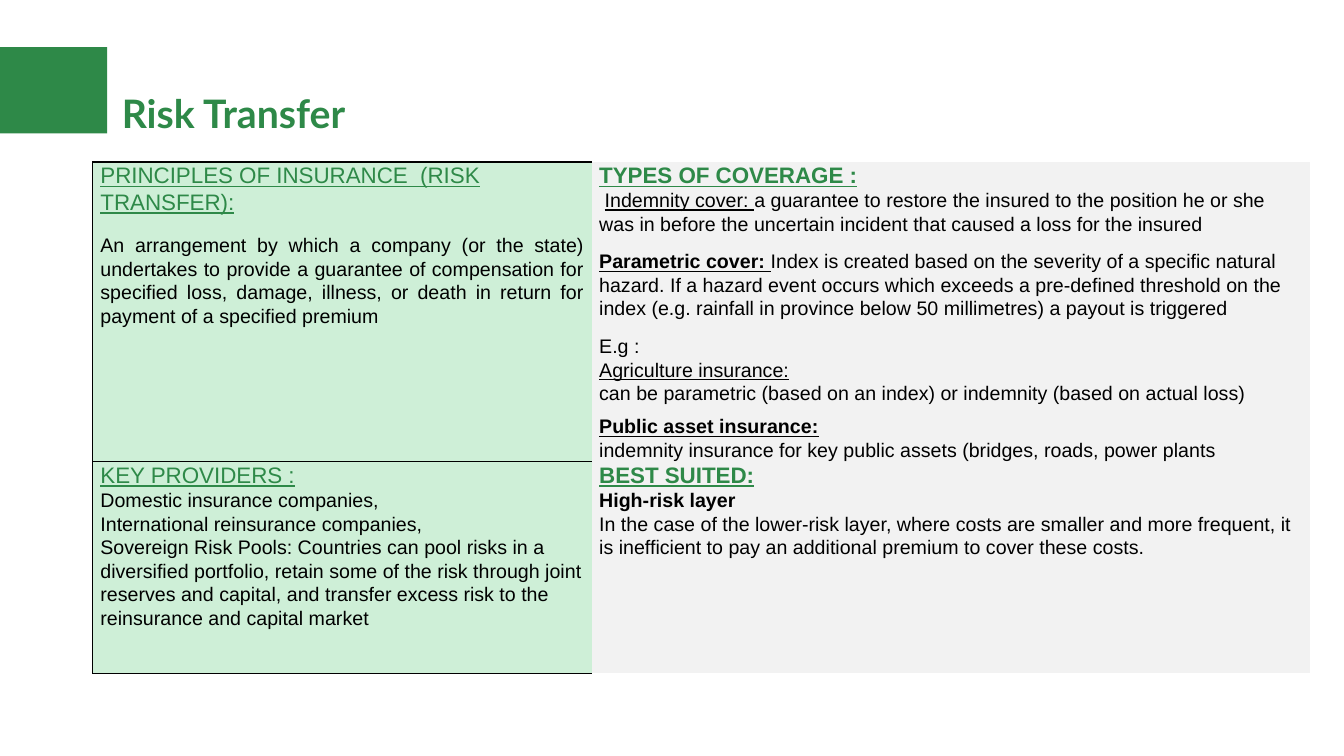
import pptx
import pptx.dml.color
import pptx.enum.shapes
import pptx.enum.text
import pptx.oxml.ns
import pptx.util
from lxml import etree

Cm, Pt = pptx.util.Cm, pptx.util.Pt
ALIGN = pptx.enum.text.PP_ALIGN

COLOURS = {"green": "2E8948", "mint": "CEEFD7", "grey": "F2F2F2", "black": "000000"}
HEADING = {"size": 16, "colour": "green", "underline": True}
BOLD_HEADING = {**HEADING, "bold": True}
LABEL = {"underline": True}
BOLD_LABEL = {"underline": True, "bold": True}
BODY = {}

TITLE = "Risk Transfer"
PRINCIPLES = [
    {"runs": [("PRINCIPLES OF INSURANCE  (RISK TRANSFER):", HEADING)]},
    {"runs": [("An arrangement by which a company (or the state) undertakes to provide a guarantee of "
               "compensation for specified loss, damage, illness, or death in return for payment of a "
               "specified premium", BODY)], "before": 13, "align": ALIGN.JUSTIFY},
]
COVERAGE = [
    {"runs": [("TYPES OF COVERAGE :", BOLD_HEADING)]},
    {"runs": [(" ", BODY), ("Indemnity cover: ", LABEL),
              ("a guarantee to restore the insured to the position he or she was in before the "
               "uncertain incident that caused a loss for the insured", BODY)]},
    {"runs": [("Parametric cover: ", BOLD_LABEL),
              ("Index is created based on the severity of a specific natural hazard. If a hazard event "
               "occurs which exceeds a pre-defined threshold on the index (e.g. rainfall in province "
               "below 50 millimetres) a payout is triggered", BODY)], "before": 10},
    {"runs": [("E.g :", BODY)], "before": 10},
    {"runs": [("Agriculture insurance:", LABEL)]},
    {"runs": [("can be parametric (based on an index) or indemnity (based on actual loss)", BODY)]},
    {"runs": [("Public asset insurance:", BOLD_LABEL)], "before": 7},
    {"runs": [("indemnity insurance for key public assets (bridges, roads, power plants", BODY)]},
]
PROVIDERS = [
    {"runs": [("KEY PROVIDERS :", HEADING)]},
    {"runs": [("Domestic insurance companies,", BODY)]},
    {"runs": [("International reinsurance companies,", BODY)]},
    {"runs": [("Sovereign Risk Pools: Countries can pool risks in a diversified portfolio, retain some of "
               "the risk through joint reserves and capital, and transfer excess risk to the "
               "reinsurance and capital market", BODY)]},
]
BEST_SUITED = [
    {"runs": [("BEST SUITED:", BOLD_HEADING)]},
    {"runs": [("High-risk layer", {"bold": True})]},
    {"runs": [("In the case of the lower-risk layer, where costs are smaller and more frequent, it is "
               "inefficient to pay an additional premium to cover these costs.", BODY)]},
]
QUADRANTS = [[PRINCIPLES, COVERAGE], [PROVIDERS, BEST_SUITED]]
COLUMNS = [
    {"width": 12.57, "fill": "mint", "edges": "LTB"},
    {"width": 18.11, "fill": "grey", "edges": ""},
]
ROW_HEIGHTS = [7.54, 5.33]


def rgb(colour):
    return pptx.dml.color.RGBColor.from_string(COLOURS[colour])


def add_text(paragraph, text, font="Arial", size=14, colour="black", bold=False, underline=False):
    run = paragraph.add_run()
    run.text = text
    run.font.name = font
    run.font.size = Pt(size)
    run.font.bold = bold
    run.font.underline = underline
    run.font.color.rgb = rgb(colour)


def set_borders(cell, edges):
    qn = pptx.oxml.ns.qn
    properties = cell._tc.get_or_add_tcPr()
    for side in "LRTB":
        border = etree.SubElement(properties, qn(f"a:ln{side}"), w=str(Pt(1)))
        if side in edges:
            fill = etree.SubElement(border, qn("a:solidFill"))
            etree.SubElement(fill, qn("a:srgbClr"), val=COLOURS["black"])
        else:
            etree.SubElement(border, qn("a:noFill"))


def fill_cell(cell, paragraphs, column):
    set_borders(cell, column["edges"])
    cell.fill.solid()
    cell.fill.fore_color.rgb = rgb(column["fill"])
    cell.margin_left = cell.margin_right = Cm(0.19)
    cell.margin_top = cell.margin_bottom = 0
    for index, content in enumerate(paragraphs):
        frame = cell.text_frame
        paragraph = frame.add_paragraph() if index else frame.paragraphs[0]
        paragraph.line_spacing = 1.07
        paragraph.alignment = content.get("align", ALIGN.LEFT)
        if "before" in content:
            paragraph.space_before = Pt(content["before"])
        for text, style in content["runs"]:
            add_text(paragraph, text, **style)


def main():
    deck = pptx.Presentation()
    deck.slide_width, deck.slide_height = Cm(33.87), Cm(19.05)
    slide = deck.slides.add_slide(deck.slide_layouts[6])

    accent = slide.shapes.add_shape(pptx.enum.shapes.MSO_SHAPE.RECTANGLE,
                                    Cm(-0.36), Cm(1.19), Cm(3.06), Cm(2.17))
    accent.shadow.inherit = False
    accent.fill.solid()
    accent.fill.fore_color.rgb = rgb("green")
    accent.line.fill.background()

    table = slide.shapes.add_table(len(ROW_HEIGHTS), len(COLUMNS), Cm(2.34), Cm(4.08),
                                   Cm(sum(column["width"] for column in COLUMNS)),
                                   Cm(sum(ROW_HEIGHTS))).table
    table.first_row = table.horz_banding = False
    for index, column in enumerate(COLUMNS):
        table.columns[index].width = Cm(column["width"])
    for row, height in enumerate(ROW_HEIGHTS):
        table.rows[row].height = Cm(height)
        for index, column in enumerate(COLUMNS):
            fill_cell(table.cell(row, index), QUADRANTS[row][index], column)

    title = slide.shapes.add_textbox(Cm(3.07), Cm(2.49), Cm(29.21), Cm(0.86)).text_frame
    title.word_wrap = True
    title.vertical_anchor = pptx.enum.text.MSO_ANCHOR.MIDDLE
    title.margin_left = title.margin_top = title.margin_bottom = 0
    title.paragraphs[0].line_spacing = 0.9
    add_text(title.paragraphs[0], TITLE, font="Lato", size=28, colour="green", bold=True)

    deck.save("out.pptx")


if __name__ == "__main__":
    main()
